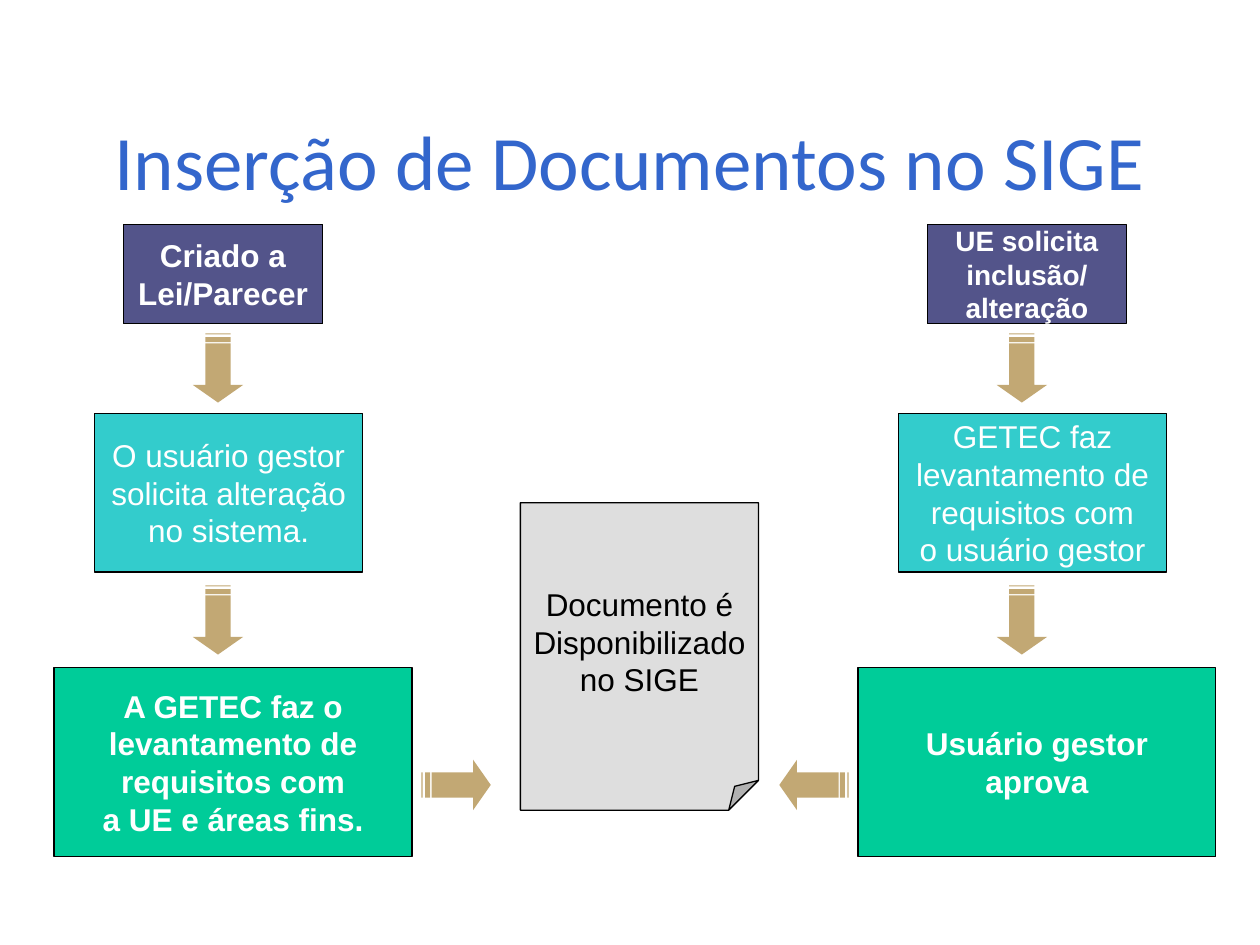
from lxml.etree import SubElement
from pptx import Presentation
from pptx.dml.color import RGBColor
from pptx.enum.shapes import MSO_SHAPE
from pptx.enum.text import MSO_ANCHOR, PP_ALIGN
from pptx.oxml.ns import qn
from pptx.util import Inches, Pt

HUES = {
    "title": "3366CC", "start": "53548A", "step": "33CCCC", "end": "00CC99",
    "arrow": "C2A874", "page": "DEDEDE", "white": "FFFFFF", "black": "000000",
}


def put_text(shape, text, size=18, color="white", bold=False, font="Arial", wrap=False):
    """Fill a shape with centred text, one paragraph per line."""
    frame = shape.text_frame
    frame.text = text
    frame.word_wrap = wrap
    frame.vertical_anchor = MSO_ANCHOR.MIDDLE
    for para in frame.paragraphs:
        para.alignment = PP_ALIGN.CENTER
        para.font.name = font
        para.font.size = Pt(size)
        para.font.bold = bold
        para.font.color.rgb = RGBColor.from_string(HUES[color])


def add_box(kind, left, top, width, height, fill):
    box = slide.shapes.add_shape(
        kind, Inches(left), Inches(top), Inches(width), Inches(height))
    box.shadow.inherit = False
    box.fill.solid()
    box.fill.fore_color.rgb = RGBColor.from_string(HUES[fill])
    box.line.color.rgb = RGBColor.from_string(HUES["black"])
    box.line.width = Pt(0.75)
    return box


deck = Presentation()
deck.slide_width = Inches(10)
deck.slide_height = Inches(7.5)
slide = deck.slides.add_slide(deck.slide_layouts[5])

title = slide.shapes.title
title.left, title.top = Inches(0.5), Inches(0.64)
title.width, title.height = Inches(9), Inches(1.25)
put_text(title, "Inserção de Documentos no SIGE", size=44, color="title",
         font="Calibri", wrap=True)

# Two columns of three steps: offset, top, width, height, fill, bold
steps = [
    (0.98, 1.78, 1.58, 0.79, "start", True),
    (0.75, 3.28, 2.13, 1.26, "step", False),
    (0.43, 5.3, 2.84, 1.5, "end", True),
]
columns = [
    (0, [
        ("Criado a\nLei/Parecer", 18),
        ("O usuário gestor\nsolicita alteração\nno sistema.", 18),
        ("A GETEC faz o\nlevantamento de\nrequisitos com\na UE e áreas fins.", 18),
    ]),
    (6.38, [
        ("UE solicita\ninclusão/\nalteração", 16),
        ("GETEC faz\nlevantamento de\nrequisitos com\no usuário gestor", 18),
        ("Usuário gestor\naprova", 18),
    ]),
]
for shift, texts in columns:
    for (left, top, width, height, fill, bold), (text, size) in zip(steps, texts):
        box = add_box(MSO_SHAPE.FLOWCHART_PROCESS, left + shift, top, width, height, fill)
        put_text(box, text, size=size, bold=bold)

# Striped arrow pointing right, in hundredths of an inch
parts = [
    [(41, 0), (41, 10), (8, 10), (8, 30), (41, 30), (41, 40), (55, 20)],
    [(3, 10), (3, 30), (7, 30), (7, 10)],
    [(0, 10), (0, 30), (1, 30), (1, 10)],
]
# Centre x, centre y, turn
arrows = [(1.73 + shift, y, 90) for shift, _ in columns for y in (2.92, 4.92)]
arrows += [(3.62, 6.23, 0), (6.46, 6.23, 180)]
for x, y, turn in arrows:
    pen = slide.shapes.build_freeform(*parts[0][0], scale=Inches(0.01))
    pen.add_line_segments(parts[0][1:], close=True)
    for part in parts[1:]:
        pen.move_to(*part[0])
        pen.add_line_segments(part[1:], close=True)
    arrow = pen.convert_to_shape(Inches(x) - Inches(0.55) // 2, Inches(y - 0.2))
    arrow.rotation = turn
    arrow.shadow.inherit = False
    arrow.fill.solid()
    arrow.fill.fore_color.rgb = RGBColor.from_string(HUES["arrow"])
    arrow.line.fill.background()

page = add_box(MSO_SHAPE.FOLDED_CORNER, 4.13, 3.99, 1.89, 2.44, "page")
guides = page.element.spPr.find(qn("a:prstGeom")).find(qn("a:avLst"))
for guide in list(guides):
    guides.remove(guide)
SubElement(guides, qn("a:gd"), name="adj", fmla="val 12500")
put_text(page, "Documento é\nDisponibilizado\nno SIGE", color="black")

deck.save("out.pptx")
